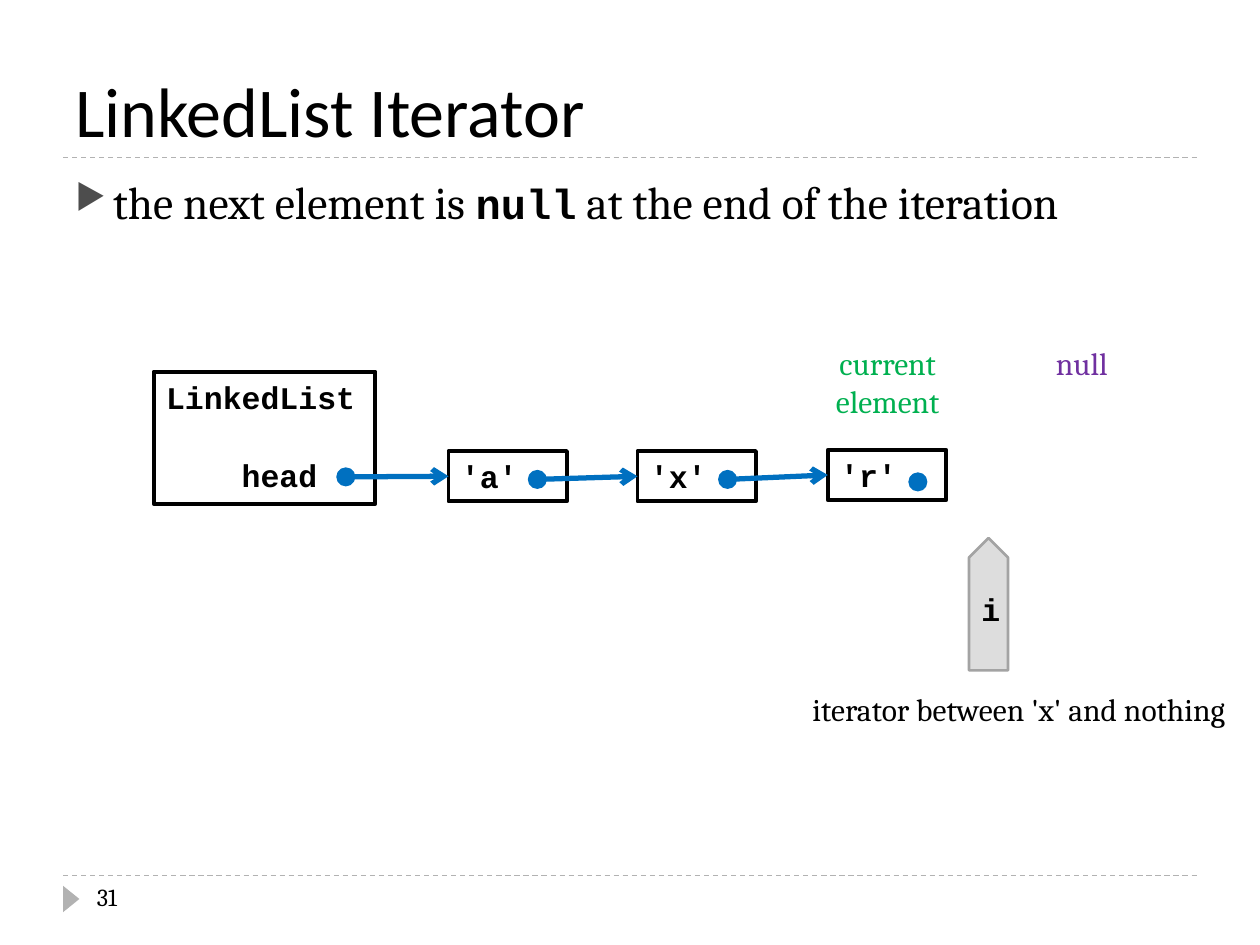
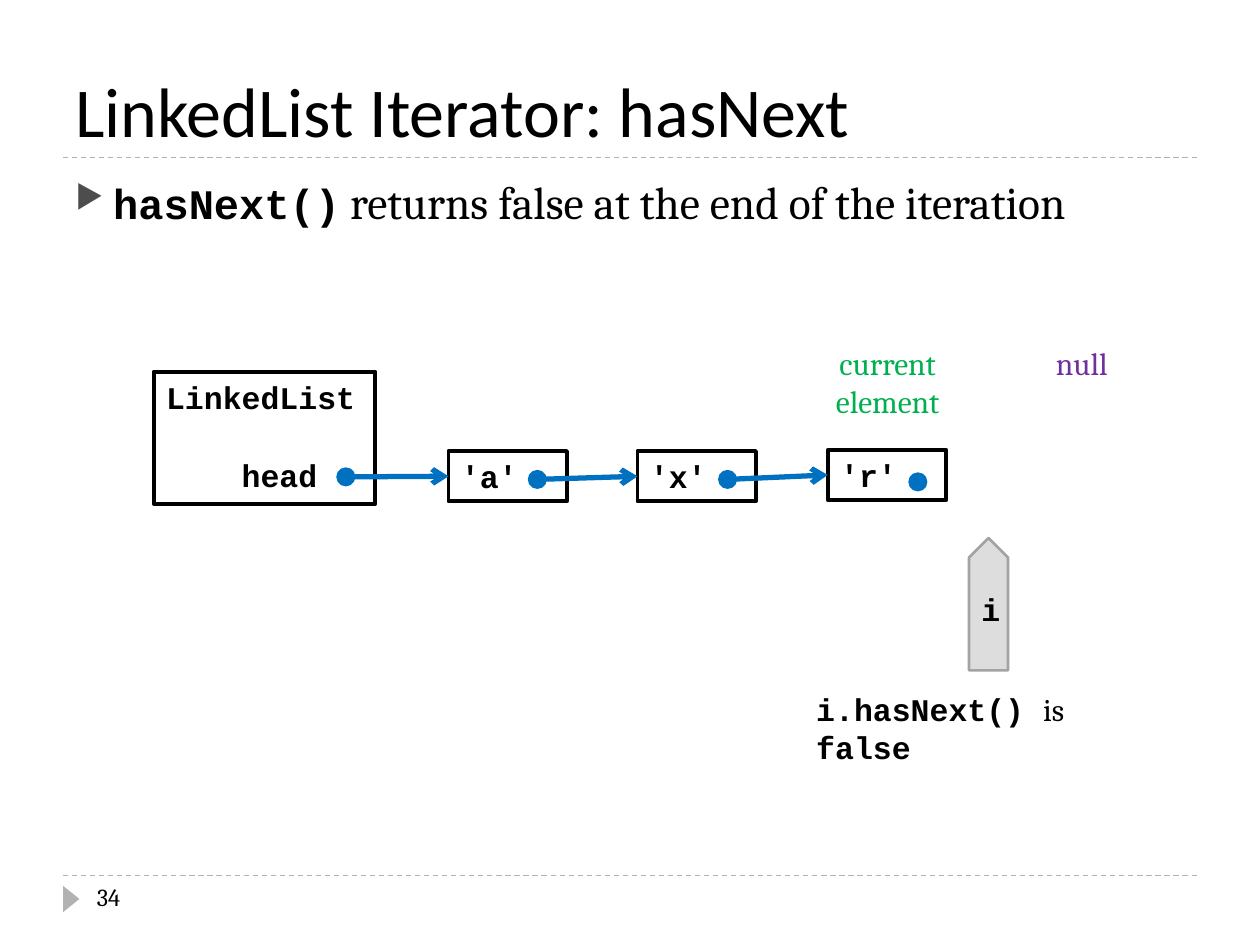
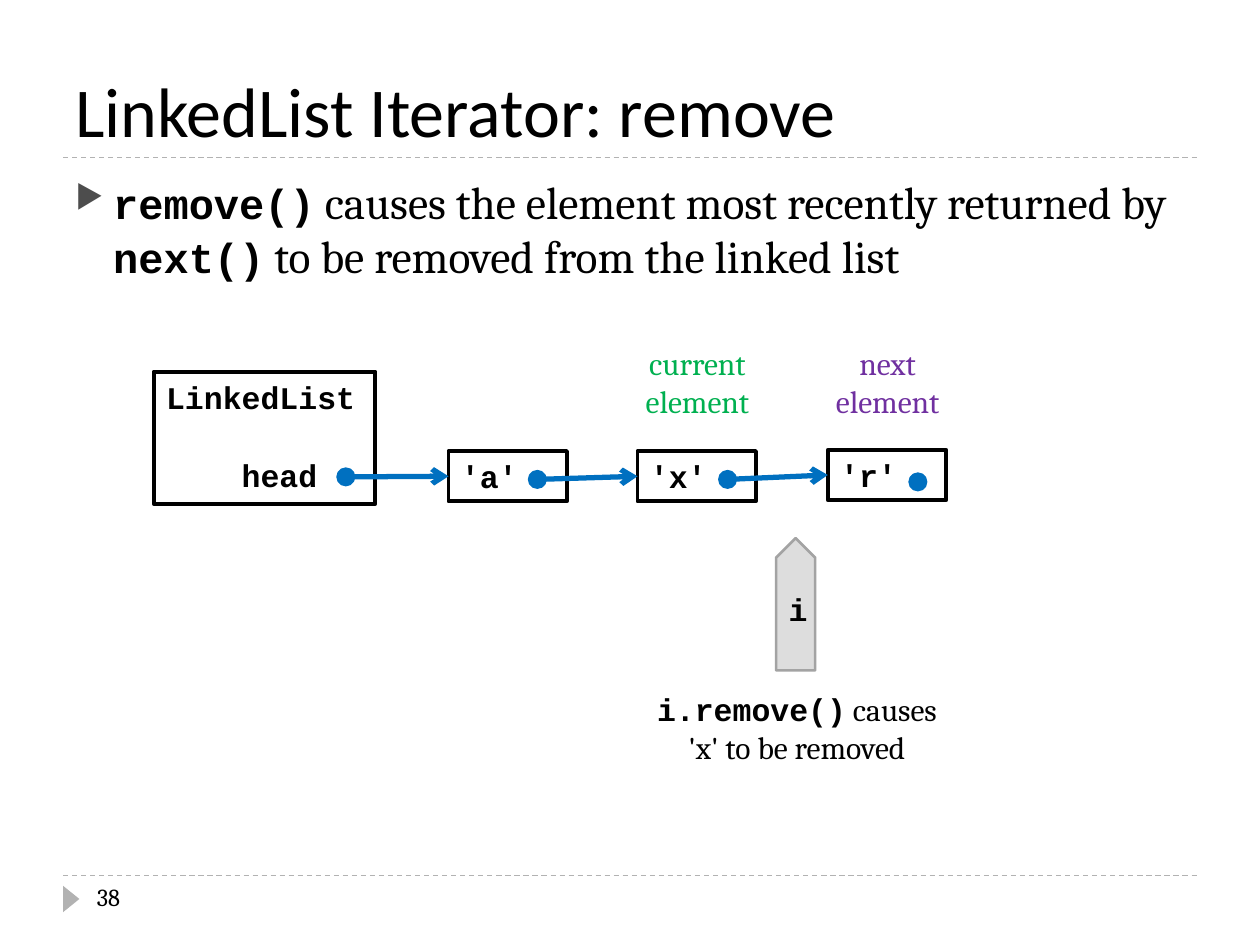
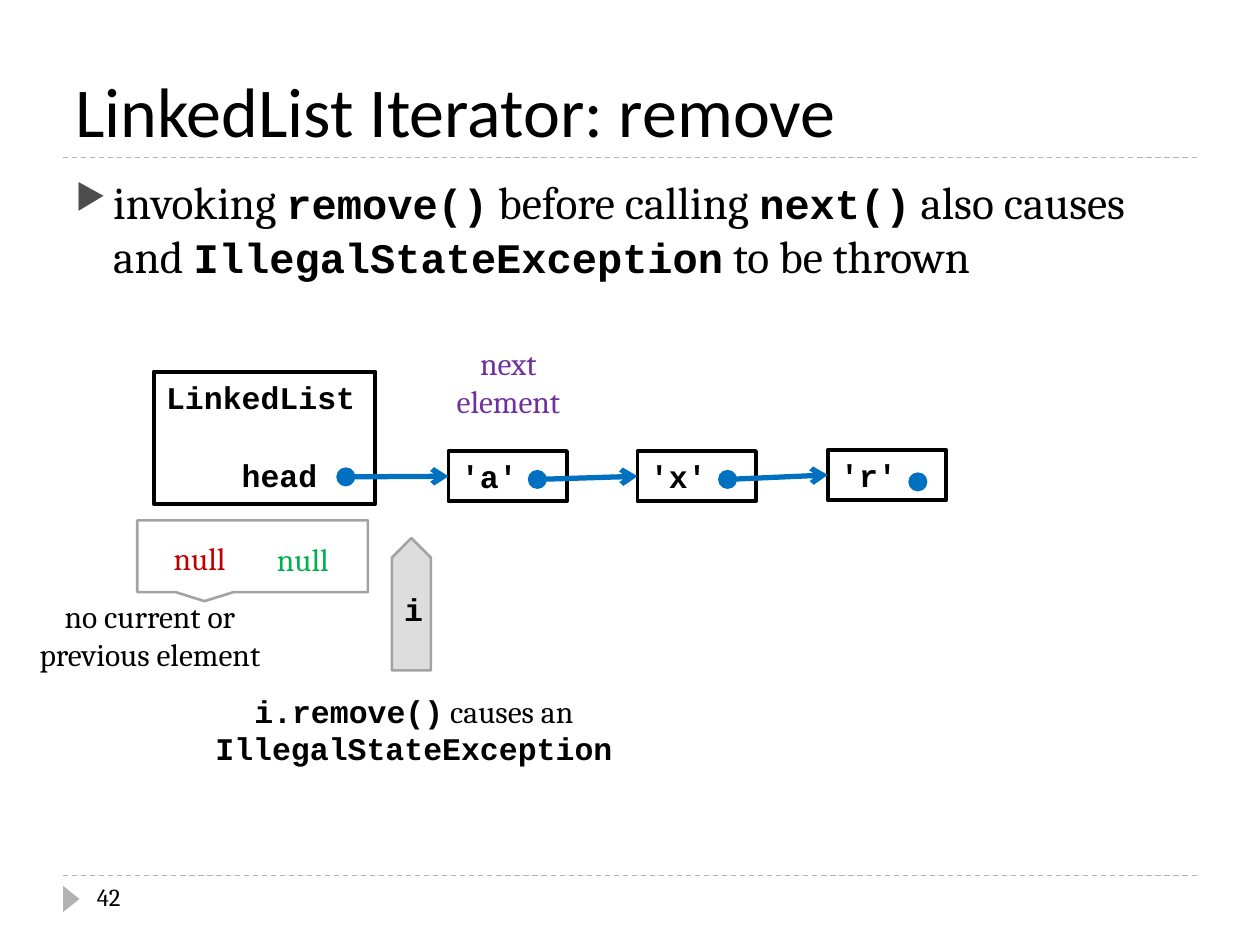
from lxml.etree import SubElement
from pptx import Presentation
from pptx.dml.color import RGBColor
from pptx.enum.dml import MSO_LINE
from pptx.enum.shapes import MSO_CONNECTOR, MSO_SHAPE as Kind
from pptx.enum.text import MSO_ANCHOR as Anchor, MSO_AUTO_SIZE as Auto, PP_ALIGN as Align
from pptx.oxml.ns import qn
from pptx.util import Inches, Pt

HUES = {
    "ink": "000000", "rule": "B2B2B2", "bullet": "4D4D4D", "link": "0070C0",
    "plate": "DDDDDD", "edge": "A3A3A3", "paper": "FFFFFF",
    "now": "00B050", "next": "7030A0", "last": "C00000",
}
HEAD, BODY, CODE = "Calibri", "Cambria", "Courier New"
DOT = 0.13
# Each node: letter, offset from the list box, offset of its dot
NODES = [("a", 2.34, 0.63, 0.64, 0.16),
         ("x", 3.84, 0.63, 0.65, 0.16),
         ("r", 5.35, 0.62, 0.65, 0.19)]


def hue(name):
    return RGBColor.from_string(HUES[name])


def write(shape, text, size=18, font=BODY, color="ink", align=Align.LEFT,
          anchor=Anchor.TOP, wrap=True, code=None):
    """Fill a shape with lines of text; backticks mark code."""
    frame = shape.text_frame
    frame.word_wrap = wrap
    frame.auto_size = Auto.NONE if wrap else Auto.SHAPE_TO_FIT_TEXT
    frame.vertical_anchor = anchor
    for row, line in enumerate(text.split("\n")):
        para = frame.add_paragraph() if row else frame.paragraphs[0]
        para.alignment = align
        for part, words in enumerate(line.split("`")):
            if not words:
                continue
            mono = part % 2 == 1
            run = para.add_run()
            run.text = words
            run.font.name = CODE if mono else font
            run.font.size = Pt(code if mono and code else size)
            run.font.bold = mono
            run.font.color.rgb = hue(color)
    return frame.paragraphs


def label(slide, text, x, y, w, h, **style):
    box = slide.shapes.add_textbox(Inches(x), Inches(y), Inches(w), Inches(h))
    return write(box, text, **style)


def note(slide, text, x, y, w, h=0.71, align=Align.CENTER, **style):
    label(slide, text, x, y, w, h, align=align, wrap=False, **style)


def shape(slide, kind, x, y, w, h, fill=None, line=None, width=1.5):
    item = slide.shapes.add_shape(kind, Inches(x), Inches(y), Inches(w), Inches(h))
    item.shadow.inherit = False
    if fill:
        item.fill.solid()
        item.fill.fore_color.rgb = hue(fill)
    else:
        item.fill.background()
    if line:
        item.line.color.rgb = hue(line)
        item.line.width = Pt(width)
    else:
        item.line.fill.background()
    return item


def stroke(slide, x, y, end_x, end_y, color, width):
    line = slide.shapes.add_connector(
        MSO_CONNECTOR.STRAIGHT, Inches(x), Inches(y), Inches(end_x), Inches(end_y))
    line.line.color.rgb = hue(color)
    line.line.width = Pt(width)
    SubElement(line.element.spPr, qn("a:effectLst"))
    return line


def arrow(slide, x, y, node):
    line = stroke(slide, x, y, x + 0.8, y, "link", 3)
    line.end_connect(node, 1)
    SubElement(line.element.spPr.find(qn("a:ln")), qn("a:tailEnd"), type="arrow")


def bullet(para):
    para.space_before = Pt(6)
    props = para._p.get_or_add_pPr()
    props.set("marL", str(Inches(0.3)))
    props.set("indent", str(Inches(-0.3)))
    tint = SubElement(props, qn("a:buClr"))
    SubElement(tint, qn("a:srgbClr"), val=HUES["bullet"])
    SubElement(props, qn("a:buSzPct"), val="76000")
    SubElement(props, qn("a:buChar"), char="▶")


def page(deck, title, point, number, x=0.5, w=9):
    """Rules, title, bullet and page number."""
    slide = deck.slides.add_slide(deck.slide_layouts[6])
    for y in (6.95, 1.25):
        rule = stroke(slide, x, y, x + w, y, "rule", 0.75)
        rule.line.dash_style = MSO_LINE.DASH
    mark = shape(slide, Kind.ISOSCELES_TRIANGLE, x - 0.04, 7.07, 0.21, DOT, fill="rule")
    mark.rotation = 90
    label(slide, title, x, 0.17, w, 1.08, size=40, font=HEAD, anchor=Anchor.BOTTOM)
    bullet(label(slide, point, x, 1.33, w, 5.4, size=26, code=24)[0])
    label(slide, number, x + 0.17, 6.95, 2.17, 0.4, size=14)
    return slide


def chain(slide, x=1.22, y=2.95):
    """The list box, its nodes and the links between them."""
    box = shape(slide, Kind.RECTANGLE, x, y, 1.76, 1.05, line="ink", width=2.25)
    head = write(box, "`LinkedList`\n`head`")[1]
    head.space_before = Pt(23)
    head._p.get_or_add_pPr().set("marL", str(Inches(0.6)))
    dots = [(x + 1.46, y + 0.77)]
    cells = []
    for letter, dx, dy, dot_x, dot_y in NODES:
        cell = shape(slide, Kind.RECTANGLE, x + dx, y + dy, 0.94, 0.4,
                     line="ink", width=2.25)
        write(cell, f"`'{letter}'`")
        cells.append(cell)
        dots.append((x + dx + dot_x, y + dy + dot_y))
    for (left, top), cell in zip(dots, cells):
        arrow(slide, left + DOT / 2, top + DOT / 2, cell)
    for left, top in dots:
        shape(slide, Kind.OVAL, left, top, DOT, DOT, fill="link", line="link")


def cursor(slide, x, y=4.64):
    """The iterator marker, pointing up."""
    plate = shape(slide, Kind.PENTAGON, x, y, 1.05, 0.31, fill="plate", line="edge")
    plate.rotation = 270
    write(plate, "`i`", align=Align.CENTER, anchor=Anchor.MIDDLE)
    plate.element.txBody.find(qn("a:bodyPr")).set("vert", "vert")


def role(slide, name, x, color):
    note(slide, f"{name}\nelement", x, 2.68, 1.09, color=color)


def finish(slide):
    """State at the end of the iteration."""
    cursor(slide, 7.32)
    role(slide, "current", 6.5, "now")
    note(slide, "null", 8.27, 2.68, 0.63, 0.4, color="next")


def empty(slide, x=1.09, y=4.13):
    """Callout for the missing current and previous elements."""
    shape(slide, Kind.RECTANGULAR_CALLOUT, x, y, 1.83, 0.57, fill="paper", line="edge")
    note(slide, "null", x + 1.01, y + 0.11, 0.63, 0.4, align=Align.LEFT, color="now")
    note(slide, "null", x + 0.19, y + 0.1, 0.63, 0.4, align=Align.LEFT, color="last")
    note(slide, "no current or\nprevious element", x - 0.94, y + 0.56, 2.08)


def main():
    deck = Presentation()
    deck.slide_width, deck.slide_height = Inches(10), Inches(7.5)
    title = "LinkedList Iterator"

    # End of the iteration
    slide = page(deck, title,
                 "the next element is `null` at the end of the iteration", "31")
    chain(slide)
    finish(slide)
    note(slide, "iterator between 'x' and nothing", 6.35, 5.43, 3.66, 0.4,
         align=Align.LEFT)

    # hasNext
    slide = page(deck, f"{title}: hasNext",
                 "`hasNext()` returns false at the end of the iteration", "34")
    chain(slide)
    finish(slide)
    note(slide, "`i.hasNext() `is `false`", 6.38, 5.43, 2.94, 0.4, align=Align.LEFT)

    # remove
    slide = page(deck, f"{title}: remove",
                 "`remove()` causes the element most recently returned by "
                 "`next()` to be removed from the linked list", "38")
    chain(slide)
    cursor(slide, 5.79)
    note(slide, "`i.remove()` causes\n'x' to be removed", 5.09, 5.43, 2.47)
    role(slide, "current", 4.99, "now")
    role(slide, "next", 6.5, "next")

    # remove before next
    slide = page(deck, f"{title}: remove",
                 "invoking `remove()` before calling `next()` also causes and "
                 "`IllegalStateException` to be thrown", "42")
    empty(slide)
    chain(slide)
    cursor(slide, 2.74)
    role(slide, "next", 3.49, "next")
    note(slide, "`i.remove()` causes an\n`IllegalStateException`", 1.6, 5.44, 3.37)

    deck.save("out.pptx")


if __name__ == "__main__":
    main()
